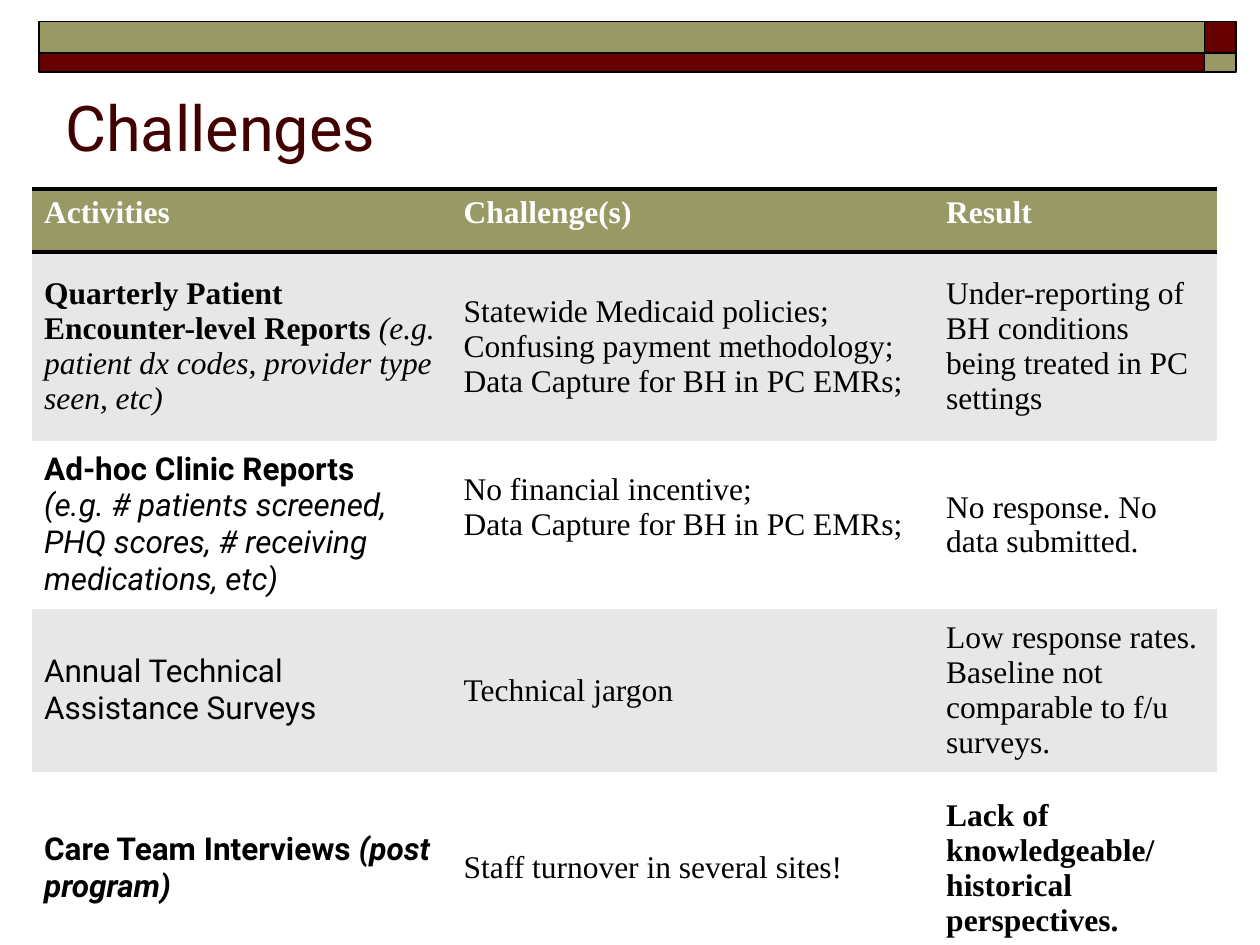
from typing import NamedTuple

import pptx
import pptx.dml.color
import pptx.enum.shapes
import pptx.enum.text
import pptx.oxml
import pptx.oxml.ns
import pptx.util

Inches = pptx.util.Inches
ANCHOR = pptx.enum.text.MSO_ANCHOR

COLORS = {"olive": "999966", "maroon": "660000", "title": "420000",
          "black": "000000", "white": "FFFFFF", "band": "E7E7E7"}
SERIF, SANS = "Times New Roman", "Roboto"
NO_STYLE = "{2D5ABB26-0587-4C30-8999-92F81FD0307C}"


class Bar(NamedTuple):
    left: float
    top: float
    width: float
    height: float
    color: str


class Text(NamedTuple):
    text: str
    font: str = SERIF
    bold: bool = False
    italic: bool = False


class Cell(NamedTuple):
    paragraphs: list[list[Text]]
    bottom: float = 0.05


BARS = [
    Bar(9.56, 0.17, 0.25, 0.25, "maroon"),
    Bar(0.31, 0.17, 9.25, 0.25, "olive"),
    Bar(0.31, 0.42, 9.25, 0.15, "maroon"),
    Bar(9.56, 0.42, 0.25, 0.15, "olive"),
]
COL_WIDTHS = [3.33, 3.83, 2.25]
ROW_HEIGHTS = [0.5, 1.5, 1.33, 1.2, 1.52]


def lines(*texts: str, bold: bool = False, bottom: float = 0.05) -> Cell:
    """A cell of plain serif paragraphs."""
    return Cell([[Text(t, bold=bold)] for t in texts], bottom)


ROWS = [
    [lines(t, bold=True) for t in ("Activities", "Challenge(s)", "Result")],
    [Cell([[Text("Quarterly Patient Encounter-level Reports ", bold=True),
            Text("(e.g. patient dx codes, provider type seen, etc)", italic=True)]]),
     lines("Statewide Medicaid policies;", "Confusing payment methodology;",
           "Data Capture for BH in PC EMRs;"),
     lines("Under-reporting of BH conditions being treated in PC settings")],
    [Cell([[Text("Ad-hoc Clinic Reports", SANS, bold=True)],
           [Text("(e.g. # patients screened, PHQ scores, # receiving medications, etc)",
                 SANS, italic=True)]]),
     lines("No financial incentive;", "Data Capture for BH in PC EMRs;", bottom=0.33),
     lines("No response. No data submitted.")],
    [Cell([[Text("Annual Technical Assistance Surveys", SANS)]]),
     lines("Technical jargon"),
     lines("Low response rates. Baseline not comparable to f/u surveys.")],
    [Cell([[Text("Care Team Interviews ", SANS, bold=True),
            Text("(post program)", SANS, bold=True, italic=True)]]),
     lines("Staff turnover in several sites!"),
     lines("Lack of knowledgeable/ historical perspectives.", bold=True)],
]


def rgb(name: str) -> pptx.dml.color.RGBColor:
    return pptx.dml.color.RGBColor.from_string(COLORS[name])


def add_run(p, text: Text, size: float, color: str) -> None:
    r = p.add_run()
    r.text = text.text
    fmt = {"name": text.font, "size": pptx.util.Pt(size),
           "bold": text.bold, "italic": text.italic}
    for key, value in fmt.items():
        setattr(r.font, key, value)
    r.font.color.rgb = rgb(color)


def draw_bar(s, bar: Bar) -> None:
    sp = s.shapes.add_shape(pptx.enum.shapes.MSO_SHAPE.RECTANGLE,
                            *(Inches(v) for v in bar[:4]))
    sp.shadow.inherit = False
    sp.fill.solid()
    sp.fill.fore_color.rgb = rgb(bar.color)
    sp.line.color.rgb = rgb("black")
    sp.line.width = pptx.util.Pt(1)


def draw_title(s, text: str) -> None:
    tf = s.shapes.add_textbox(Inches(0.42), Inches(0.67), Inches(9), Inches(0.75)).text_frame
    tf.word_wrap = True
    tf.margin_top = Inches(0.03)
    add_run(tf.paragraphs[0], Text(text, SANS), 36, "title")


def add_border(cell, tag: str, index: int) -> None:
    ln = pptx.oxml.parse_xml(
        f'<a:{tag} {pptx.oxml.ns.nsdecls("a")} w="{pptx.util.Pt(2)}"><a:solidFill>'
        f'<a:srgbClr val="{COLORS["black"]}"/></a:solidFill></a:{tag}>')
    cell._tc.get_or_add_tcPr().insert(index, ln)


def fill_cell(cell, content: Cell, row: int) -> None:
    header = row == 0
    cell.fill.solid()
    cell.fill.fore_color.rgb = rgb("olive" if header else "band" if row % 2 else "white")
    cell.vertical_anchor = ANCHOR.TOP if header else ANCHOR.MIDDLE
    cell.margin_bottom = Inches(content.bottom)
    tf = cell.text_frame
    for i, texts in enumerate(content.paragraphs):
        p = tf.add_paragraph() if i else tf.paragraphs[0]
        for text in texts:
            add_run(p, text, 18, "white" if header else "black")
    if header:
        for i, tag in enumerate(("lnT", "lnB")):
            add_border(cell, tag, i)


def draw_table(s) -> None:
    table = s.shapes.add_table(len(ROWS), len(COL_WIDTHS), Inches(0.25), Inches(1.5),
                               Inches(sum(COL_WIDTHS)), Inches(sum(ROW_HEIGHTS))).table
    table.horz_banding = False
    table._tbl.tblPr.find(pptx.oxml.ns.qn("a:tableStyleId")).text = NO_STYLE
    for col, width in zip(table.columns, COL_WIDTHS):
        col.width = Inches(width)
    for i, (height, cells) in enumerate(zip(ROW_HEIGHTS, ROWS)):
        table.rows[i].height = Inches(height)
        for j, content in enumerate(cells):
            fill_cell(table.cell(i, j), content, i)


def main() -> None:
    prs = pptx.Presentation()
    prs.slide_width, prs.slide_height = Inches(10), Inches(7.5)
    s = prs.slides.add_slide(prs.slide_layouts[6])
    # Header bars
    for bar in BARS:
        draw_bar(s, bar)
    # Title and table
    draw_title(s, "Challenges")
    draw_table(s)
    prs.save("out.pptx")


if __name__ == "__main__":
    main()
